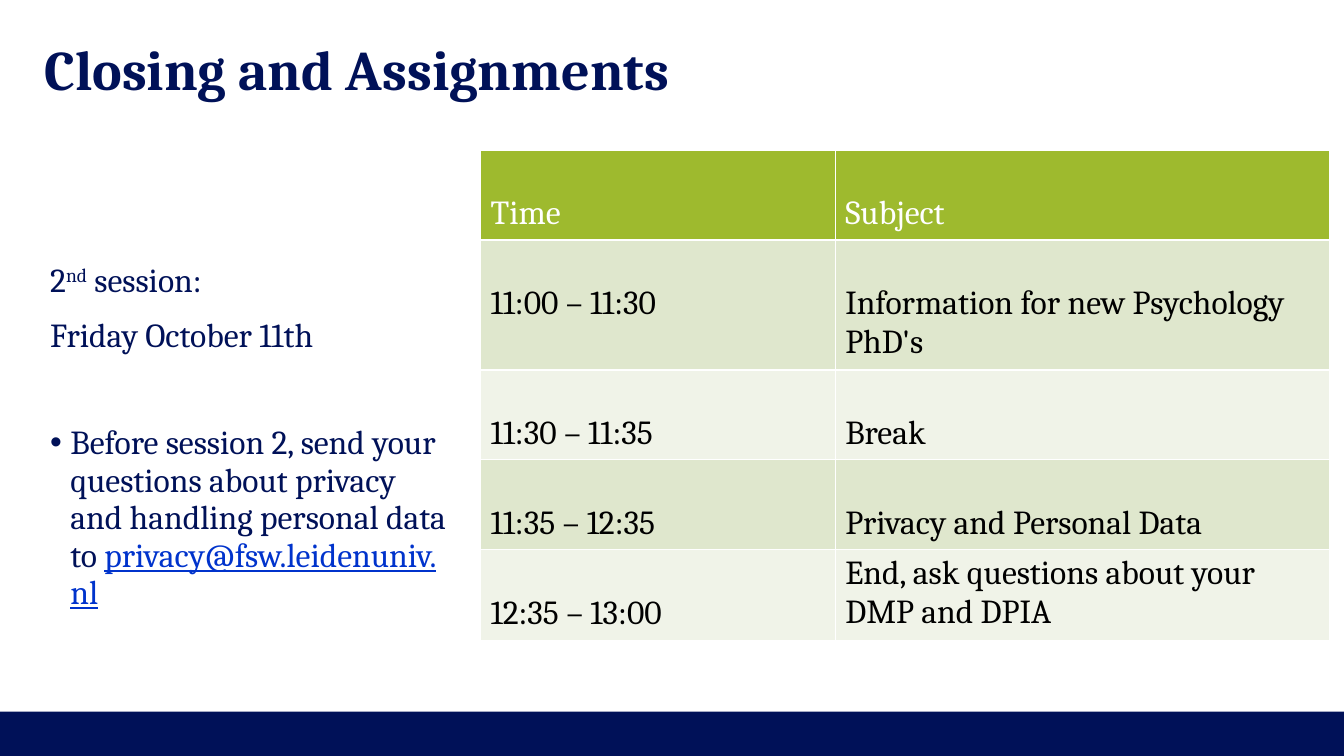
from lxml import etree
from pptx import Presentation
from pptx.dml.color import RGBColor
from pptx.enum import shapes, text
from pptx.oxml import ns
from pptx.util import Inches, Pt

NAVY = RGBColor(0x00, 0x11, 0x58)
BLUE = RGBColor(0x00, 0x33, 0xCC)
GREEN = RGBColor(0x9E, 0xBA, 0x2E)
SAGE = RGBColor(0xDF, 0xE7, 0xCD)
PALE = RGBColor(0xF0, 0xF3, 0xE8)
WHITE = RGBColor(0xFF, 0xFF, 0xFF)
BLACK = RGBColor(0x00, 0x00, 0x00)

TITLE = "Closing and Assignments"
MAIL = "privacy@fsw.leidenuniv.nl"
NOTES = [
    (["2", "nd", " session:"], 0, False),
    (["Friday October 11th"], 6, False),
    (["Before session 2, send your questions about privacy and handling personal data to\u00a0", MAIL], 44, True),
]
ROWS = [
    ("Time", "Subject"),
    ("11:00 – 11:30", "Information for new Psychology PhD's"),
    ("11:30 – 11:35", "Break"),
    ("11:35 – 12:35", "Privacy and Personal Data"),
    ("12:35 – 13:00", "End, ask questions about your DMP and DPIA"),
]
COLS = [3.52, 4.91]
TALL = [0.87, 1.25, 0.87, 0.87, 0.87]


def style(font, color, size=24, **more):
    for key, val in dict(name="Cambria", size=Pt(size), **more).items():
        setattr(font, key, val)
    font.color.rgb = color


def add(node, tag, **attrs):
    return etree.SubElement(node, ns.qn(tag), **attrs)


def edge(cell):
    props = cell._tc.get_or_add_tcPr()
    for spot, side in enumerate("LRTB"):
        line = add(props, "a:ln" + side, w="12700")
        add(add(line, "a:solidFill"), "a:srgbClr", val=str(WHITE))
        props.insert(spot, line)


def bullet(para):
    props = para._p.get_or_add_pPr()
    props.set("marL", str(Inches(0.2)))
    props.set("indent", str(-Inches(0.2)))
    add(add(props, "a:buClr"), "a:srgbClr", val=str(NAVY))
    add(props, "a:buFont", typeface="Arial")
    add(props, "a:buChar", char="•")


def make_title(slide):
    title = slide.shapes.title
    place = dict(left=0.44, top=0.44, width=12.46, height=0.47)
    for key, val in place.items():
        setattr(title, key, Inches(val))
    frame = title.text_frame
    for side in ("left", "top", "right", "bottom"):
        setattr(frame, "margin_" + side, 0)
    frame.vertical_anchor = text.MSO_ANCHOR.MIDDLE
    frame.text = TITLE
    para = frame.paragraphs[0]
    para.alignment = text.PP_ALIGN.LEFT
    style(para.runs[0].font, NAVY, 40, bold=True)


def make_bar(slide):
    bar = slide.shapes.add_shape(shapes.MSO_SHAPE.RECTANGLE, 0, Inches(7.06), Inches(13.34), Inches(0.44))
    bar.shadow.inherit = False
    bar.fill.solid()
    bar.fill.fore_color.rgb = NAVY
    bar.line.fill.background()


def make_notes(slide):
    box = slide.shapes.add_textbox(Inches(0.4), Inches(2.56), Inches(4.14), Inches(3.6))
    frame = box.text_frame
    frame.word_wrap = True
    for spot, (parts, gap, dot) in enumerate(NOTES):
        para = frame.add_paragraph() if spot else frame.paragraphs[0]
        para.line_spacing = 0.93
        para.space_before, para.space_after = Pt(gap), Pt(6)
        if dot:
            bullet(para)
        for part in parts:
            run = para.add_run()
            run.text = part
            link = part == MAIL
            style(run.font, BLUE if link else NAVY, underline=link)
            if part == "nd":
                run.font._element.set("baseline", "30000")


def make_table(slide):
    table = slide.shapes.add_table(
        len(ROWS), len(COLS), Inches(4.77), Inches(1.49), Inches(sum(COLS)), Inches(sum(TALL))).table
    for col, wide in zip(table.columns, COLS):
        col.width = Inches(wide)
    for r, (row, tall) in enumerate(zip(ROWS, TALL)):
        table.rows[r].height = Inches(tall)
        for c, words in enumerate(row):
            cell = table.cell(r, c)
            cell.text = words
            cell.margin_top = Inches(0.05 if words == ROWS[-1][1] else 0.44)
            cell.fill.solid()
            cell.fill.fore_color.rgb = (SAGE if r % 2 else PALE) if r else GREEN
            edge(cell)
            style(cell.text_frame.paragraphs[0].runs[0].font, BLACK if r else WHITE, bold=False)


def main():
    deck = Presentation()
    deck.slide_width, deck.slide_height = Inches(13.34), Inches(7.5)
    slide = deck.slides.add_slide(deck.slide_layouts[5])
    for make in (make_bar, make_title, make_notes, make_table):
        make(slide)
    deck.save("out.pptx")


if __name__ == "__main__":
    main()
